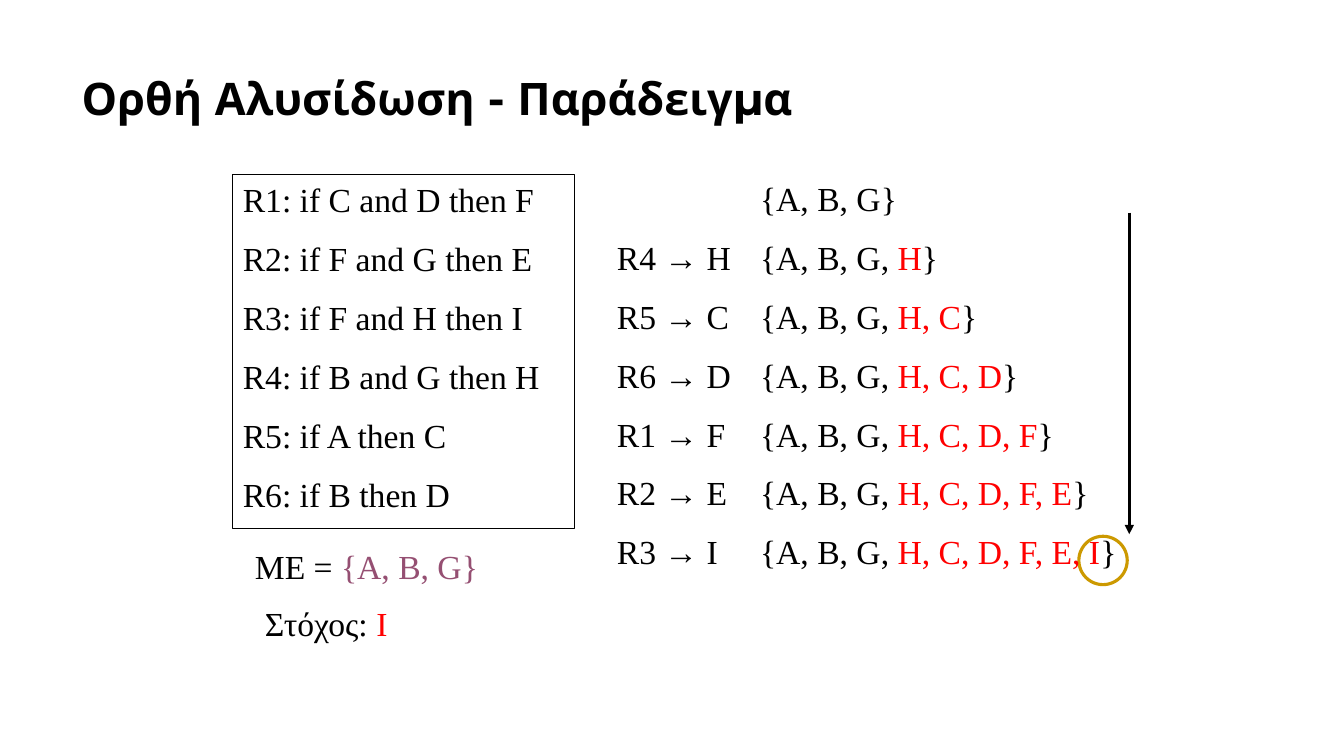
"""Build the forward chaining example slide."""
from lxml.etree import SubElement
from pptx import Presentation
from pptx.dml.color import RGBColor
from pptx.enum.shapes import MSO_CONNECTOR, MSO_SHAPE
from pptx.enum.text import MSO_ANCHOR, PP_ALIGN
from pptx.oxml.ns import qn
from pptx.util import Inches, Pt

BLACK, RED, PURPLE, GOLD = "000000", "FF0000", "954F72", "CC9900"


def rgb(color):
    return RGBColor.from_string(color)


def write(tf, lines, tab=None):
    tf.word_wrap = True
    tf.vertical_anchor = MSO_ANCHOR.TOP
    for i, line in enumerate(lines):
        p = tf.paragraphs[0] if i == 0 else tf.add_paragraph()
        p.alignment = PP_ALIGN.LEFT
        p.space_before = Pt(13.2 if i else 0)
        p.font.name, p.font.size = "Times New Roman", Pt(24)
        if tab:
            tabs = SubElement(p._p.get_or_add_pPr(), qn("a:tabLst"))
            SubElement(tabs, qn("a:tab"), pos=str(tab), algn="l")
            p._p.pPr.insert_element_before(tabs, "a:defRPr")
        for text, color in line:
            r = p.add_run()
            r.text = text
            r.font.color.rgb = rgb(color)


prs = Presentation()
prs.slide_width, prs.slide_height = Inches(13.33), Inches(7.5)
s = prs.slides.add_slide(prs.slide_layouts[5])

title = s.shapes.title
title.left, title.top = Inches(0.71), Inches(0.28)
title.width, title.height = Inches(11.5), Inches(1.45)
tf = title.text_frame
tf.text = "Ορθή Αλυσίδωση - Παράδειγμα"
tf.vertical_anchor = MSO_ANCHOR.MIDDLE
p = tf.paragraphs[0]
p.alignment, p.line_spacing = PP_ALIGN.LEFT, 0.9
p.font.name, p.font.size, p.font.bold = "Montserrat", Pt(32), True
p.font.color.rgb = rgb(BLACK)

rules = [("C and D", "F"), ("F and G", "E"), ("F and H", "I"),
         ("B and G", "H"), ("A", "C"), ("B", "D")]
box = s.shapes.add_shape(MSO_SHAPE.RECTANGLE, Inches(2.31), Inches(1.73),
                         Inches(3.39), Inches(3.51))
goal = s.shapes.add_shape(MSO_SHAPE.OVAL, Inches(10.7), Inches(5.32),
                          Inches(0.48), Inches(0.48))
for sp, color, width in [(box, BLACK, 0.75), (goal, GOLD, 2.25)]:
    sp.shadow.inherit = False
    sp.fill.background()
    sp.line.color.rgb, sp.line.width = rgb(color), Pt(width)
write(box.text_frame, [[(f"R{n}: if {cond} then {fact}", BLACK)]
                       for n, (cond, fact) in enumerate(rules, 1)])

steps = [[("\t{A, B, G}", BLACK)]]
derived = []
for n in (4, 5, 6, 1, 2, 3):
    fact = rules[n - 1][1]
    derived.append(fact)
    steps.append([(f"R{n} → {fact}\t{{A, B, G, ", BLACK),
                  (", ".join(derived), RED), ("}", BLACK)])

for x, y, w, h, lines, tab in [
    (2.43, 5.37, 3.18, 0.5, [[("ME = ", BLACK), ("{A, B, G}", PURPLE)]], None),
    (2.53, 5.93, 2.87, 0.5, [[("Στόχος: ", BLACK), ("I", RED)]], None),
    (6.02, 1.72, 5.25, 4.14, steps, Inches(1.42)),
]:
    sp = s.shapes.add_textbox(Inches(x), Inches(y), Inches(w), Inches(h))
    write(sp.text_frame, lines, tab)

arrow = s.shapes.add_connector(MSO_CONNECTOR.STRAIGHT, Inches(11.2), Inches(2.11),
                               Inches(11.2), Inches(5.3))
arrow.line.color.rgb, arrow.line.width = rgb(BLACK), Pt(2.25)
SubElement(arrow.line._get_or_add_ln(), qn("a:tailEnd"), type="triangle")
SubElement(arrow._element.spPr, qn("a:effectLst"))

prs.save("out.pptx")
